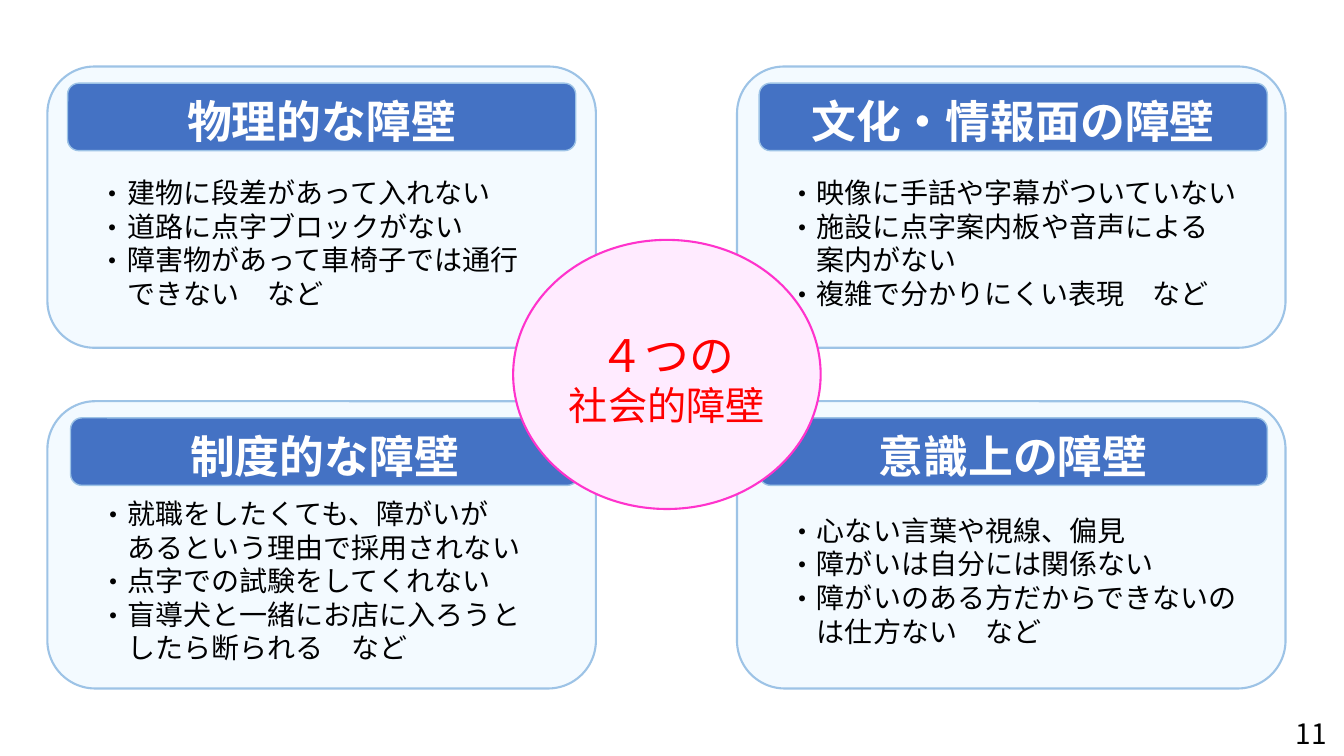
import dataclasses

import pptx
import pptx.dml.color
import pptx.enum.shapes
import pptx.enum.text
import pptx.oxml
import pptx.oxml.ns
import pptx.util

SHAPES = pptx.enum.shapes.MSO_SHAPE
ALIGN = pptx.enum.text.PP_ALIGN
ANCHOR = pptx.enum.text.MSO_ANCHOR


@dataclasses.dataclass(frozen=True)
class Theme:
    font: str = "Noto Sans CJK JP"
    panel: str = "F3FAFF"
    border: str = "9DC3E6"
    banner: str = "4472C4"
    hub: str = "FFEBFF"
    hub_border: str = "FF33CC"
    hub_text: str = "FF0000"
    text: str = "000000"
    inverse: str = "FFFFFF"
    heading_size: int = 32
    subheading_size: int = 28
    body_size: int = 20
    line_ratio: float = 1.2


class Board:
    def __init__(self, presentation, theme):
        self.presentation = presentation
        self.theme = theme
        self.slide = presentation.slides.add_slide(presentation.slide_layouts[5])

    def across(self, share):
        return round(self.presentation.slide_width * share / 100)

    def down(self, share):
        return round(self.presentation.slide_height * share / 100)

    def box(self, left, top, width, height):
        return self.across(left), self.down(top), self.across(width), self.down(height)

    def color(self, value):
        return pptx.dml.color.RGBColor.from_string(value)

    def shape(self, kind, box, fill, line, line_width):
        shape = self.slide.shapes.add_shape(kind, *self.box(*box))
        shape.shadow.inherit = False
        shape.fill.solid()
        shape.fill.fore_color.rgb = self.color(fill)
        shape.line.color.rgb = self.color(line)
        shape.line.width = pptx.util.Pt(line_width)
        return shape

    def frame(self, shape, top_inset, anchor=ANCHOR.MIDDLE, wrap=True):
        frame = shape.text_frame
        frame.word_wrap = wrap
        frame.auto_size = pptx.enum.text.MSO_AUTO_SIZE.NONE
        frame.vertical_anchor = anchor
        frame.margin_top = self.down(top_inset)
        return frame

    def paragraph(self, frame, index, lines, size, color, bold=False, align=ALIGN.LEFT, bullet=False):
        paragraph = frame.add_paragraph() if index else frame.paragraphs[0]
        paragraph.alignment = align
        paragraph.line_spacing = pptx.util.Pt(size * self.theme.line_ratio)
        paragraph.space_before = pptx.util.Pt(0)
        if bullet:
            self.bullet(paragraph, size)
        for number, line in enumerate(lines):
            if number:
                paragraph.add_line_break()
            self.run(paragraph, line, size, color, bold)

    def bullet(self, paragraph, size):
        properties = paragraph._p.get_or_add_pPr()
        properties.set("marL", str(pptx.util.Pt(2 * size)))
        properties.set("indent", str(-pptx.util.Pt(size)))
        namespace = pptx.oxml.ns.nsdecls("a")
        for markup in (f'<a:buFont {namespace} typeface="{self.theme.font}"/>',
                       f'<a:buChar {namespace} char="・"/>'):
            properties.append(pptx.oxml.parse_xml(markup))

    def run(self, paragraph, text, size, color, bold):
        run = paragraph.add_run()
        run.text = text
        run.font.size = pptx.util.Pt(size)
        run.font.bold = bold
        run.font.color.rgb = self.color(color)
        run.font.name = self.theme.font
        namespace = pptx.oxml.ns.nsdecls("a")
        east_asian = pptx.oxml.parse_xml(f'<a:ea {namespace} typeface="{self.theme.font}"/>')
        run.font._element.append(east_asian)

    def panel(self, box, items):
        shape = self.shape(SHAPES.ROUNDED_RECTANGLE, box, self.theme.panel, self.theme.border, 1.5)
        frame = self.frame(shape, 10.1)
        for index, lines in enumerate(items):
            self.paragraph(frame, index, lines, self.theme.body_size, self.theme.text, bullet=True)

    def banner(self, box, text):
        shape = self.shape(SHAPES.ROUNDED_RECTANGLE, box, self.theme.banner, self.theme.border, 1)
        frame = self.frame(shape, 1.6)
        self.paragraph(frame, 0, [text], self.theme.heading_size, self.theme.inverse, True, ALIGN.CENTER)

    def hub(self, box, lines):
        self.shape(SHAPES.OVAL, box, self.theme.hub, self.theme.hub_border, 1.5)
        title = self.slide.shapes.title
        title.left, title.top, title.width, title.height = self.box(*box)
        self.slide.shapes._spTree.append(title._element)
        frame = self.frame(title, 1.6)
        sizes = (self.theme.heading_size, self.theme.subheading_size)
        for index, (line, size) in enumerate(zip(lines, sizes)):
            self.paragraph(frame, index, [line], size, self.theme.hub_text, False, ALIGN.CENTER)

    def page_number(self, box, text):
        shape = self.slide.shapes.add_textbox(*self.box(*box))
        frame = self.frame(shape, 0.9, ANCHOR.TOP, False)
        self.paragraph(frame, 0, [text], self.theme.body_size, self.theme.text)


COLUMNS = (3.53, 54.84)
ROWS = ((8.8, 37.2), (53.07, 38))
PANEL_WIDTH = 40.81
BANNER_WIDTH, BANNER_HEIGHT, BANNER_DROP = 37.81, 8.93, 2.2

BARRIERS = (
    (0, 0, 5.03, "物理的な障壁", (
        ["建物に段差があって入れない"],
        ["道路に点字ブロックがない"],
        ["障害物があって車椅子では通行", "できない　など"])),
    (1, 0, 56.49, "文化・情報面の障壁", (
        ["映像に手話や字幕がついていない"],
        ["施設に点字案内板や音声による", "案内がない"],
        ["複雑で分かりにくい表現　など"])),
    (0, 1, 5.25, "制度的な障壁", (
        ["就職をしたくても、障がいが", "あるという理由で採用されない"],
        ["点字での試験をしてくれない"],
        ["盲導犬と一緒にお店に入ろうと", "したら断られる　など"])),
    (1, 1, 56.49, "意識上の障壁", (
        ["心ない言葉や視線、偏見"],
        ["障がいは自分には関係ない"],
        ["障がいのある方だからできないの", "は仕方ない　など"])),
)


def main():
    presentation = pptx.Presentation()
    presentation.slide_width = pptx.util.Inches(13.33)
    presentation.slide_height = pptx.util.Inches(7.5)
    board = Board(presentation, Theme())
    for column, row, banner_left, heading, items in BARRIERS:
        top, height = ROWS[row]
        board.panel((COLUMNS[column], top, PANEL_WIDTH, height), items)
        board.banner((banner_left, top + BANNER_DROP, BANNER_WIDTH, BANNER_HEIGHT), heading)
    board.hub((38.18, 31.73, 22.88, 35.6), ("４つの", "社会的障壁"))
    board.page_number((95.65, 93.87, 4.28, 5.87), "11")
    presentation.save("out.pptx")


if __name__ == "__main__":
    main()
